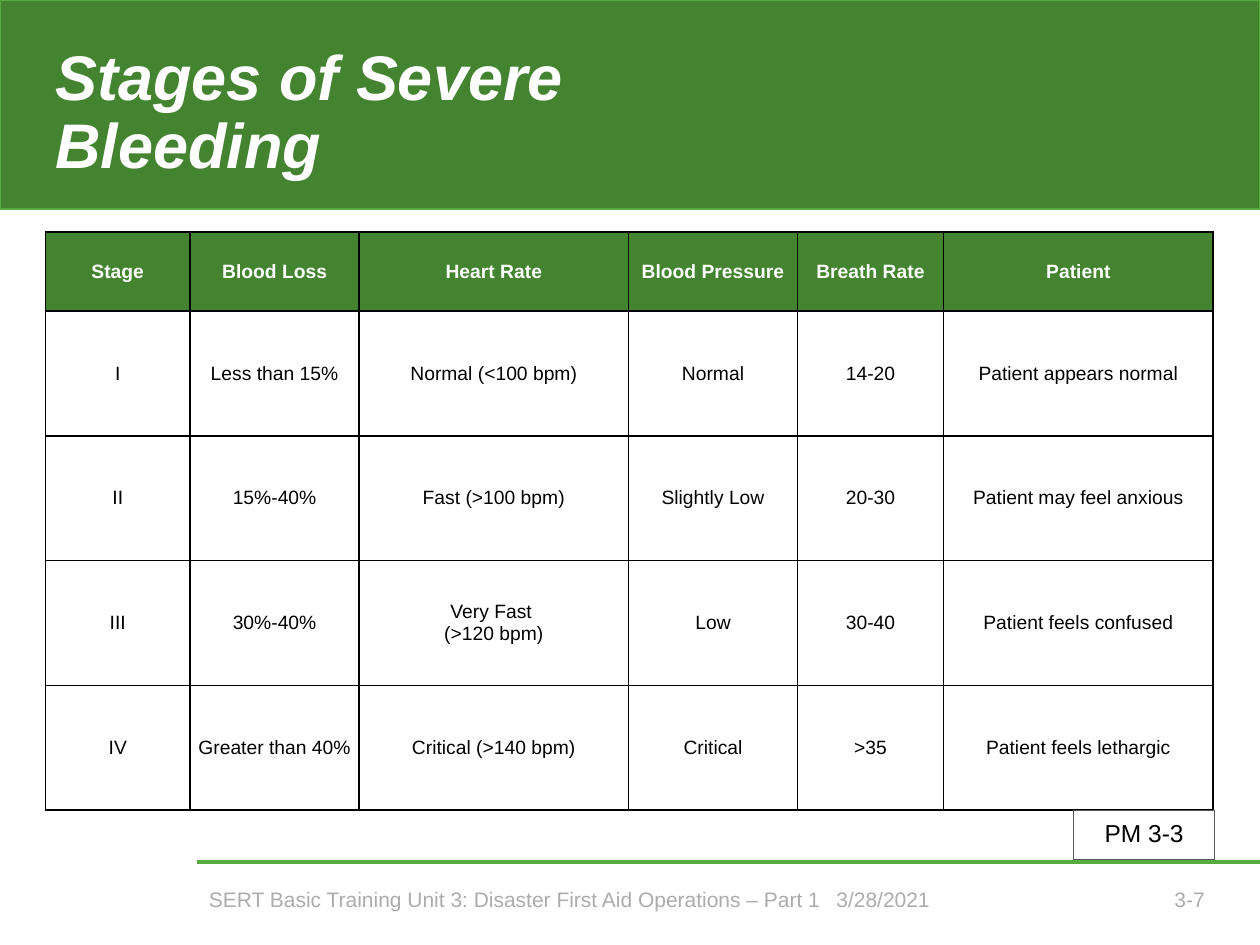
"""Build the slide on the stages of severe bleeding."""
from lxml.etree import SubElement
from pptx import Presentation
from pptx.dml.color import RGBColor
from pptx.enum.shapes import MSO_CONNECTOR, MSO_SHAPE
from pptx.enum.text import MSO_ANCHOR, PP_ALIGN
from pptx.oxml.ns import qn
from pptx.util import Inches, Pt

DARK_GREEN = RGBColor(0x44, 0x84, 0x31)
LIGHT_GREEN = RGBColor(0x57, 0xAC, 0x40)
WHITE = RGBColor(0xFF, 0xFF, 0xFF)
BLACK = RGBColor(0x00, 0x00, 0x00)
FOOTER_GRAY = RGBColor(0xAF, 0xAB, 0xAB)
BORDER_GRAY = RGBColor(0x57, 0x57, 0x57)

TITLE = {"size": Pt(36), "bold": True, "italic": True}
HEADER = {"size": Pt(11), "bold": True}
BODY = {"size": Pt(11), "bold": False}
REFERENCE = {"size": Pt(14)}
FOOTER = {"size": Pt(12)}

COLUMN_WIDTHS = [1.15, 1.34, 2.14, 1.34, 1.16, 2.14]
ROW_HEIGHTS = [0.63] + [0.99] * 4
ROWS = [
    ["Stage", "Blood Loss", "Heart Rate", "Blood Pressure", "Breath Rate", "Patient"],
    ["I", "Less than 15%", "Normal (<100 bpm)", "Normal", "14-20", "Patient appears normal"],
    ["II", "15%-40%", "Fast (>100 bpm)", "Slightly Low", "20-30", "Patient may feel anxious"],
    ["III", "30%-40%", "Very Fast \n(>120 bpm)", "Low", "30-40", "Patient feels confused"],
    ["IV", "Greater than 40%", "Critical (>140 bpm)", "Critical", ">35", "Patient feels lethargic"],
]


def write_text(frame, text, alignment, color, font_format, line_spacing=0.9, tab=None):
    frame.word_wrap = True
    frame.vertical_anchor = MSO_ANCHOR.MIDDLE
    frame.text = text
    for paragraph in frame.paragraphs:
        paragraph.alignment = alignment
        paragraph.line_spacing = line_spacing
        if tab:
            tab_list = SubElement(paragraph._p.get_or_add_pPr(), qn("a:tabLst"))
            SubElement(tab_list, qn("a:tab"), pos=str(tab), algn="l")
        font = paragraph.font
        font.name = "Arial"
        font.color.rgb = color
        for name, value in font_format.items():
            setattr(font, name, value)


def add_rectangle(left, top, width, height, line_color, line_width):
    rectangle = slide.shapes.add_shape(
        MSO_SHAPE.RECTANGLE, Inches(left), Inches(top), Inches(width), Inches(height)
    )
    rectangle.shadow.inherit = False
    rectangle.fill.background()
    rectangle.line.color.rgb = line_color
    rectangle.line.width = Pt(line_width)
    return rectangle


presentation = Presentation()
presentation.slide_width = Inches(10)
presentation.slide_height = Inches(7.5)
slide = presentation.slides.add_slide(presentation.slide_layouts[6])

banner = add_rectangle(0, 0, 10, 1.66, LIGHT_GREEN, 1)
banner.fill.solid()
banner.fill.fore_color.rgb = DARK_GREEN

footer_rule = slide.shapes.add_connector(
    MSO_CONNECTOR.STRAIGHT, Inches(1.56), Inches(6.84), Inches(10), Inches(6.84)
)
footer_rule.line.color.rgb = LIGHT_GREEN
footer_rule.line.width = Pt(2.04)
SubElement(footer_rule._element.spPr, qn("a:effectLst"))

table = slide.shapes.add_table(
    len(ROWS), len(COLUMN_WIDTHS), Inches(0.36), Inches(1.84),
    Inches(sum(COLUMN_WIDTHS)), Inches(sum(ROW_HEIGHTS)),
).table
for column, width in zip(table.columns, COLUMN_WIDTHS):
    column.width = Inches(width)
for row_index, (row, height, values) in enumerate(zip(table.rows, ROW_HEIGHTS, ROWS)):
    row.height = Inches(height)
    is_header = row_index == 0
    for cell, value in zip(row.cells, values):
        cell_format = {
            "margin_left": Inches(0.04), "margin_right": Inches(0.04),
            "margin_top": 0, "margin_bottom": 0, "vertical_anchor": MSO_ANCHOR.MIDDLE,
        }
        for name, setting in cell_format.items():
            setattr(cell, name, setting)
        write_text(
            cell.text_frame, value, PP_ALIGN.CENTER, WHITE if is_header else BLACK,
            HEADER if is_header else BODY, line_spacing=1.0,
        )
        properties = cell._tc.get_or_add_tcPr()
        for side in ("a:lnL", "a:lnR", "a:lnT", "a:lnB"):
            border = SubElement(properties, qn(side), w=str(Pt(1)))
            border_fill = SubElement(border, qn("a:solidFill"))
            SubElement(border_fill, qn("a:srgbClr"), val=str(BLACK))
        if is_header:
            cell.fill.solid()
            cell.fill.fore_color.rgb = DARK_GREEN
        else:
            cell.fill.background()

reference_box = add_rectangle(8.52, 6.43, 1.12, 0.39, BORDER_GRAY, 0.75)
write_text(reference_box.text_frame, "PM 3-3", PP_ALIGN.CENTER, BLACK, REFERENCE)

footer_text = "SERT Basic Training Unit 3: Disaster First Aid Operations – Part 1\t3/28/2021"
for position, text, alignment, color, font_format, tab in [
    ((0.34, 0.35, 6.35, 1.11), "Stages of Severe Bleeding", PP_ALIGN.LEFT, WHITE, TITLE, None),
    ((1.56, 6.98, 6.45, 0.33), footer_text, PP_ALIGN.LEFT, FOOTER_GRAY, FOOTER, Inches(4.98)),
    ((7.69, 6.98, 1.97, 0.33), "3-7", PP_ALIGN.RIGHT, FOOTER_GRAY, FOOTER, None),
]:
    text_box = slide.shapes.add_textbox(*[Inches(length) for length in position])
    write_text(text_box.text_frame, text, alignment, color, font_format, tab=tab)

presentation.save("out.pptx")
